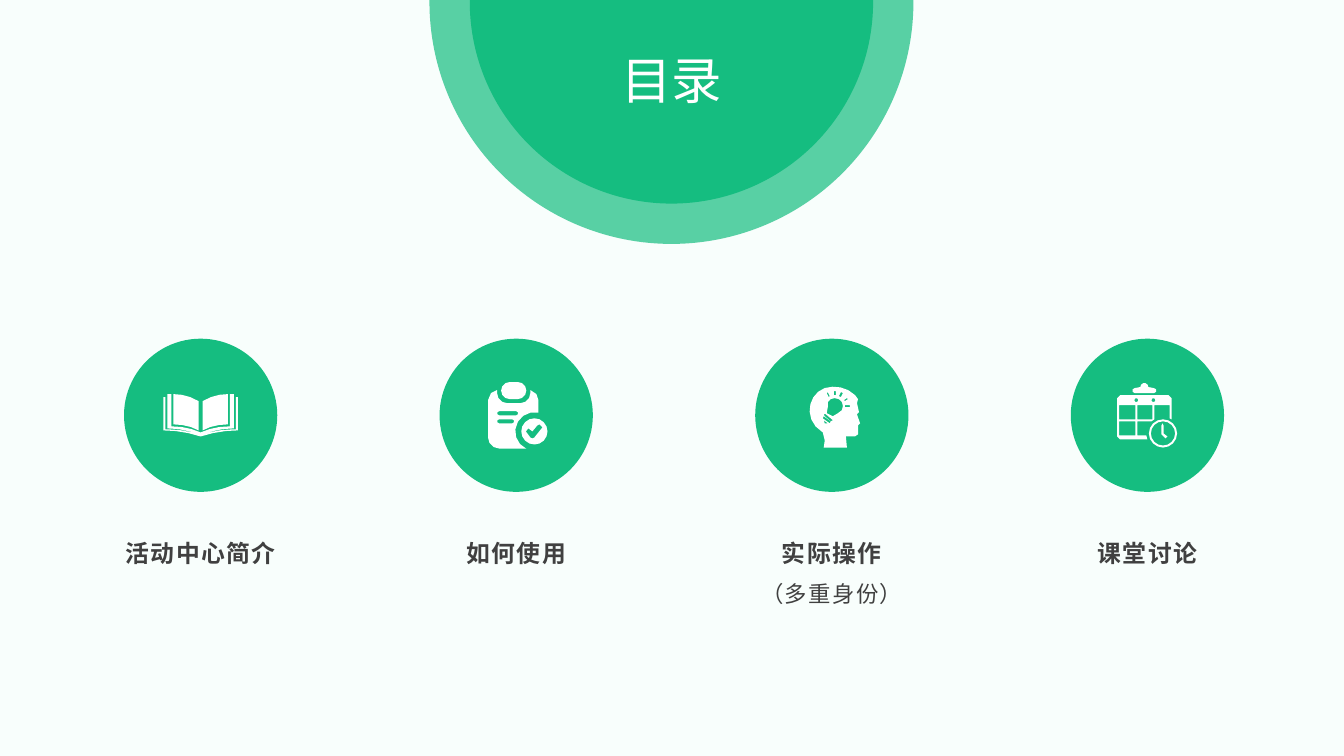
"""Build the contents slide: a half-round title and four round topic icons."""
from dataclasses import dataclass
from math import cos, pi, sin

from lxml import etree
from pptx import Presentation
from pptx.dml.color import RGBColor
from pptx.enum.shapes import MSO_SHAPE
from pptx.enum.text import MSO_ANCHOR, MSO_AUTO_SIZE, PP_ALIGN
from pptx.oxml.ns import qn
from pptx.shapes.base import BaseShape
from pptx.slide import Slide
from pptx.util import Inches, Pt

ELLIPSE = MSO_SHAPE.OVAL
MIDDLE = MSO_ANCHOR.MIDDLE
CENTER = PP_ALIGN.CENTER
GROW = MSO_AUTO_SIZE.SHAPE_TO_FIT_TEXT

Point = tuple[float, float]
Contour = list[Point]


@dataclass(frozen=True)
class Theme:
    """Colours, font and type sizes of the slide."""
    background: RGBColor = RGBColor(0xF8, 0xFE, 0xFC)
    green: RGBColor = RGBColor(0x15, 0xBD, 0x80)
    white: RGBColor = RGBColor(0xFF, 0xFF, 0xFF)
    text: RGBColor = RGBColor(0x40, 0x40, 0x40)
    font: str = "Noto Sans CJK SC"
    title_size: int = 36
    label_size: int = 17
    note_size: int = 16


@dataclass(frozen=True)
class Topic:
    """One entry: its label, its icon in hundredths of an inch, and a note."""
    label: str
    icon: list[Contour]
    note: str = ""


THEME = Theme()
SLIDE_WIDTH, SLIDE_HEIGHT = 13.33, 7.5
CENTER_X = 6.66
DISC_LEFT, DISC_TOP, DISC_SIZE, DISC_PITCH = 1.23, 3.36, 1.52, 3.13
LABEL_TOP, LABEL_WIDTH, LINE_HEIGHT = 5.15, 2.48, 0.48


def arc(x: float, y: float, radius: float, start: float = 0, end: float = 360,
        steps: int = 3) -> Contour:
    """Return points on a circle between two angles in degrees."""
    angles = [(start + (end - start) * step / steps) * pi / 180 for step in range(steps + 1)]
    return [(x + radius * cos(angle), y + radius * sin(angle)) for angle in angles]


def circle(x: float, y: float, radius: float) -> Contour:
    """Return a full circle."""
    return arc(x, y, radius, steps=16)


def box(left: float, top: float, right: float, bottom: float) -> Contour:
    """Return a rectangle."""
    return [(left, top), (right, top), (right, bottom), (left, bottom)]


def pill(left: float, top: float, right: float, bottom: float, steps: int = 3) -> Contour:
    """Return a bar with half-round ends."""
    radius, middle = (bottom - top) / 2, (top + bottom) / 2
    return (arc(left + radius, middle, radius, 90, 270, steps)
            + arc(right - radius, middle, radius, -90, 90, steps))


def curve(p0: Point, p1: Point, p2: Point, p3: Point, steps: int = 3) -> Contour:
    """Return points on a cubic curve."""
    def blend(axis: int, t: float) -> float:
        """Return one coordinate of the curve."""
        u = 1 - t
        return (u**3 * p0[axis] + 3 * u * u * t * p1[axis]
                + 3 * u * t * t * p2[axis] + t**3 * p3[axis])
    return [(blend(0, step / steps), blend(1, step / steps)) for step in range(steps + 1)]


def mirror(half: Contour, axis: float = 76) -> Contour:
    """Return a contour reflected in a vertical axis, in reverse order."""
    return [(2 * axis - x, y) for x, y in reversed(half)]


def book_icon() -> list[Contour]:
    """Return an open book."""
    cover = [*curve((76, 96), (66, 92), (55, 90), (45, 90)), (41, 90), (41, 58),
             (39, 58), *curve((39, 91), (51, 91), (64, 93), (76, 97))]
    lining = [*curve((76, 96), (65, 91), (54, 89), (43, 89)), (43, 55), (47, 55),
              *curve((47, 87), (58, 87), (67, 89), (76, 93))]
    leaf = [*curve((74, 91), (67, 87), (58, 85), (49, 85)),
            *curve((49, 55), (57, 55), (66, 57), (74, 62))]
    return [cover + mirror(cover), lining + mirror(lining), leaf, mirror(leaf)]


def clipboard_icon() -> list[Contour]:
    """Return a clipboard with a tick badge."""
    board = [*arc(80, 54, 10, 0, 90), *arc(67, 54, 10, 90, 180), (57, 51),
             (51, 54), (48, 61), *arc(59, 98, 11, 180, 90), (86, 109),
             *arc(94, 92, 19, 115, 282, 7), (98, 61), (96, 55), (90, 51)]
    tick = [(85.5, 92), (88, 89), (92, 92), (97, 86), (99, 85), (102, 88),
            (94, 98), (92, 99), (90, 98)]
    return [pill(61, 43, 86, 60, 6), board, pill(57, 80, 74, 84),
            pill(57, 72, 78, 76), circle(94, 92, 13), tick]


def head_icon() -> list[Contour]:
    """Return a head in profile with a light bulb."""
    head = [(68, 108), (69, 101), *curve((67, 93), (47, 81), (52, 55), (69, 49), 7),
            *curve((69, 49), (79, 46), (91, 48), (99, 56), 4),
            (102, 60), (101, 64), (103, 73), (101, 75), (104, 84),
            (102, 86), (102, 95), (99, 97), (90, 97), (91, 108)]
    bulb = [*curve((83, 60), (79, 58), (74, 59), (72, 63)), (72, 68), (71, 74),
            (77, 77), (82, 74), *curve((86, 71), (88, 67), (87, 62), (83, 60))]
    threads = [[(76, 80), (70, 75), (68, 75), (69, 77), (75, 82), (77, 81)],
               [(75, 82), (68, 77), (67, 79), (74, 84)],
               [(68, 81), (69, 84), (72, 84)]]
    rays = [[(85, 58), (87, 54), (85, 53), (83, 57)], [(89, 62), (92, 60), (91, 59), (88, 61)],
            [(74, 57), (72, 53), (71, 54), (73, 58)], box(78, 52, 80, 56), box(89, 66, 94, 68)]
    return [head, bulb, *threads, *rays]


def calendar_icon() -> list[Contour]:
    """Return a calendar with a clock."""
    sheet = [(75, 96), (66, 96), (66, 82), (80, 82), (83, 80), (83, 66), (98, 66), (98, 79),
             (100, 80), (100, 59), (97, 56), (49, 56), (46, 59), (46, 97), (49, 100), (76, 100)]
    days = [box(48, 66, 64, 80), box(48, 82, 64, 96), box(66, 66, 81, 80)]
    clip = [*arc(63.5, 51.5, 2.5, 90, 270), *arc(73, 48, 4, 180, 360, 5),
            *arc(82.5, 51.5, 2.5, -90, 90)]
    hands = [(94, 99), (96, 97), (92, 94), (92, 86), (91, 84), (90, 86), (90, 95)]
    rings = [arc(x, 61, 2, steps=6) for x in (65, 82)]
    return [clip, sheet, *days, *rings, circle(91.5, 94, 14), circle(91.5, 94, 12), hands]


def paint(shape: BaseShape, colour: RGBColor) -> None:
    """Give a shape a plain fill without line or shadow."""
    shape.shadow.inherit = False
    shape.fill.solid()
    shape.fill.fore_color.rgb = colour
    shape.line.fill.background()


def add_disc(shapes, left: float, top: float, size: float) -> BaseShape:
    """Add a green disc."""
    disc = shapes.add_shape(ELLIPSE, Inches(left), Inches(top), Inches(size), Inches(size))
    paint(disc, THEME.green)
    return disc


def add_icon(page: Slide, contours: list[Contour], left: float, top: float) -> None:
    """Add an icon as one white freeform."""
    placed = [[(Inches(left + x / 100), Inches(top + y / 100)) for x, y in contour]
              for contour in contours]
    builder = page.shapes.build_freeform(*placed[0][0])
    builder.add_line_segments(placed[0][1:], close=True)
    for contour in placed[1:]:
        builder.move_to(*contour[0])
        builder.add_line_segments(contour[1:], close=True)
    paint(builder.convert_to_shape(), THEME.white)


def style(para, size: int, colour: RGBColor, spacing: float, bold: bool = False,
          tracking: int = 0) -> None:
    """Format a centred paragraph; tracking is in points."""
    para.alignment, para.line_spacing = CENTER, spacing
    para.font.size, para.font.bold, para.font.name = Pt(size), bold, THEME.font
    para.font.color.rgb = colour
    properties = para._p.get_or_add_pPr().get_or_add_defRPr()
    properties.set("spc", str(tracking * 100))
    etree.SubElement(properties, qn("a:ea"), typeface=THEME.font)


def add_header(page: Slide) -> None:
    """Add the two discs cut by the top edge and the title over them."""
    group = page.shapes.add_group_shape()
    halo, _ = [add_disc(group.shapes, CENTER_X - size / 2, 0.02 - size / 2, size)
               for size in (4.8, 4)]
    colour = halo._element.spPr.find(".//" + qn("a:srgbClr"))
    etree.SubElement(colour, qn("a:alpha"), val="70000")
    title = page.shapes.title
    page.shapes._spTree.append(title._element)
    title.left, title.top, title.width, title.height = map(Inches, (5.34, 0.33, 2.64, 0.99))
    title.text_frame.text = "目录"
    title.text_frame.vertical_anchor = MIDDLE
    para = title.text_frame.paragraphs[0]
    para.space_before = Pt(10)
    style(para, THEME.title_size, THEME.white, 0.9)


def add_topic(page: Slide, topic: Topic, left: float) -> None:
    """Add a topic's disc, icon and label."""
    add_disc(page.shapes, left, DISC_TOP, DISC_SIZE)
    add_icon(page, topic.icon, left, DISC_TOP)
    height = LINE_HEIGHT * (2 if topic.note else 1)
    label = page.shapes.add_textbox(Inches(left + (DISC_SIZE - LABEL_WIDTH) / 2),
                                    Inches(LABEL_TOP), Inches(LABEL_WIDTH), Inches(height))
    frame = label.text_frame
    frame.word_wrap, frame.auto_size = True, GROW
    frame.text = topic.label
    style(frame.paragraphs[0], THEME.label_size, THEME.text, 1.5, bold=True, tracking=1)
    if topic.note:
        note = frame.add_paragraph()
        note.text = topic.note
        style(note, THEME.note_size, THEME.text, 1.5, tracking=1)


def main() -> None:
    """Build and save the deck."""
    deck = Presentation()
    deck.slide_width, deck.slide_height = Inches(SLIDE_WIDTH), Inches(SLIDE_HEIGHT)
    page = deck.slides.add_slide(deck.slide_layouts[5])
    page.background.fill.solid()
    page.background.fill.fore_color.rgb = THEME.background
    add_header(page)
    topics = [Topic("活动中心简介", book_icon()), Topic("如何使用", clipboard_icon()),
              Topic("实际操作", head_icon(), "（多重身份）"), Topic("课堂讨论", calendar_icon())]
    for index, topic in enumerate(topics):
        add_topic(page, topic, DISC_LEFT + index * DISC_PITCH)
    deck.save("out.pptx")


if __name__ == "__main__":
    main()
